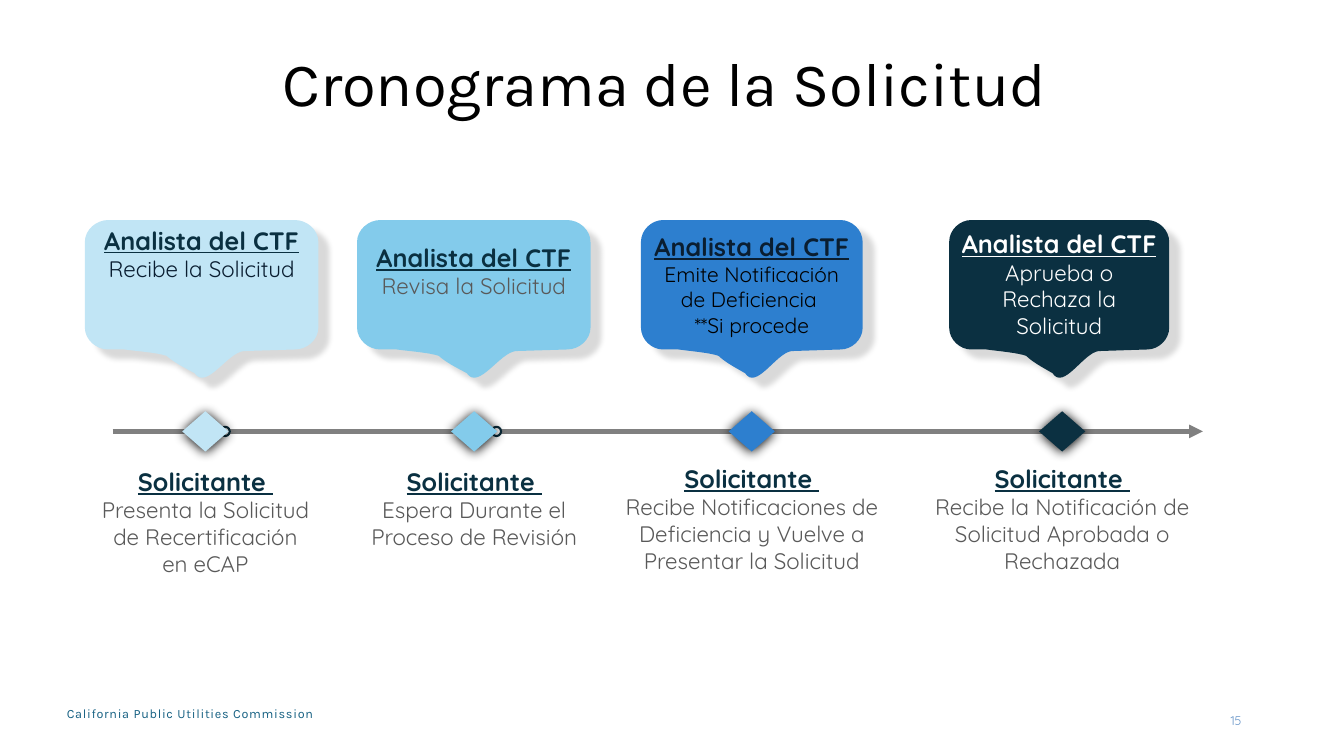
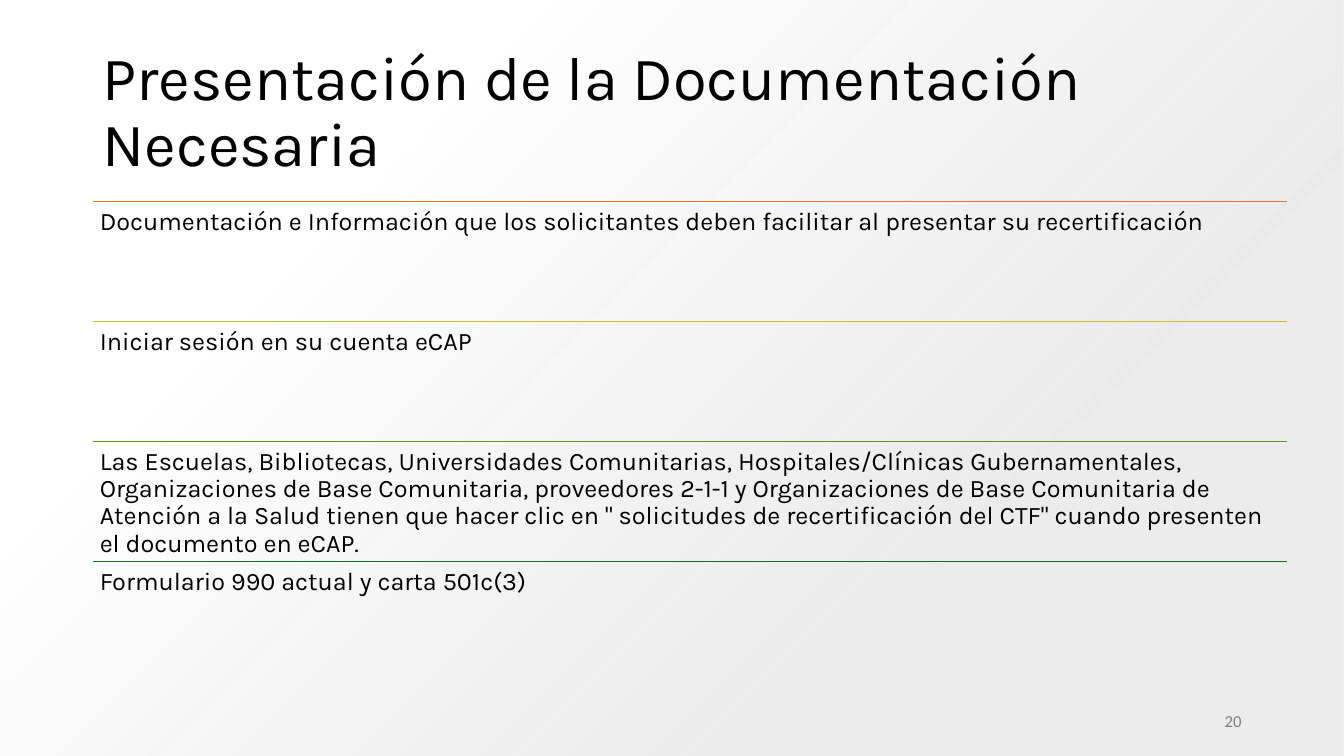
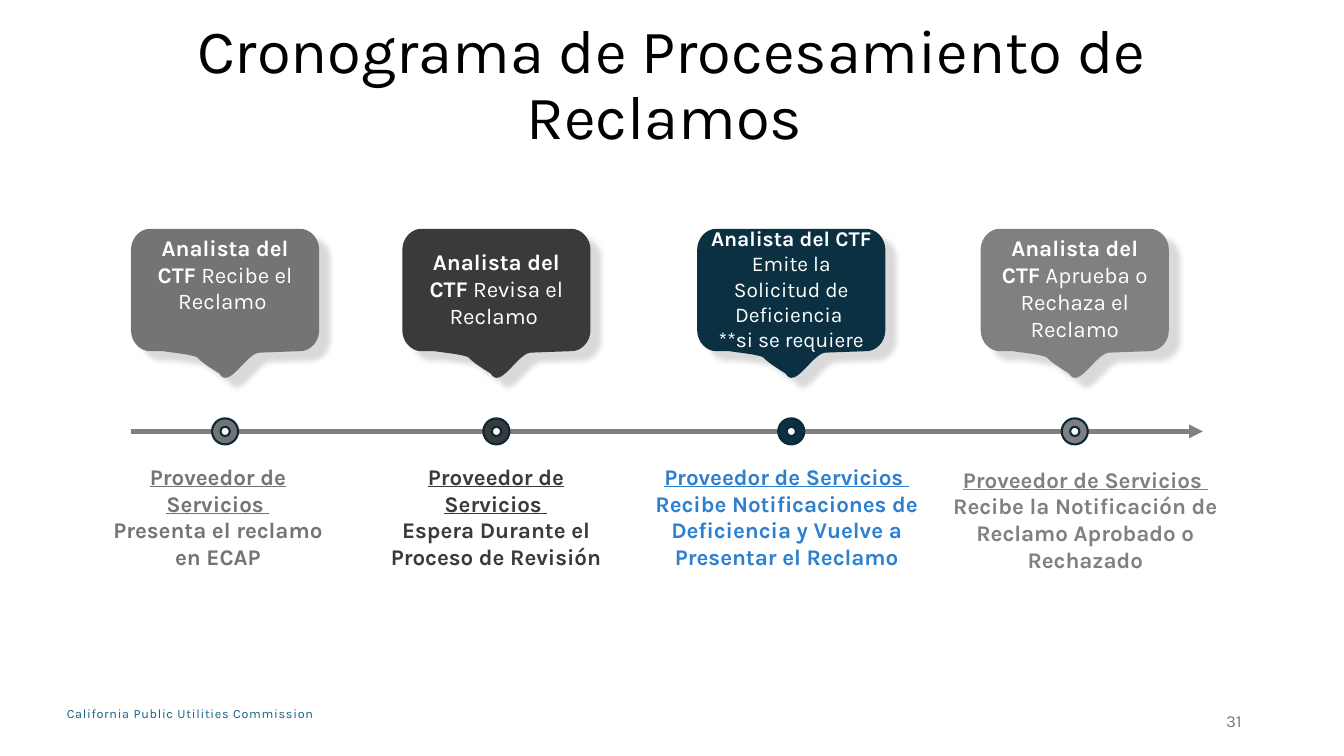
from dataclasses import dataclass, replace

from pptx import Presentation
from pptx import oxml, util as u
from pptx.dml.color import RGBColor
from pptx.enum import shapes, text
from pptx.oxml import ns

COLUMNS, ROWS = 160, 90
CELL = u.Inches(13.33) / COLUMNS
TITLE_ONLY = 5

BLACK = RGBColor(0x00, 0x00, 0x00)
WHITE = RGBColor(0xFF, 0xFF, 0xFF)
INK = RGBColor(0x0A, 0x1E, 0x31)
NAVY = RGBColor(0x0B, 0x30, 0x41)
HEADING = RGBColor(0x0A, 0x30, 0x41)
OUTLINE = RGBColor(0x09, 0x2A, 0x39)
PALE = RGBColor(0xC1, 0xE5, 0xF5)
SKY = RGBColor(0x83, 0xCB, 0xEB)
BLUE = RGBColor(0x2D, 0x7F, 0xCF)
TEAL = RGBColor(0x15, 0x60, 0x82)
SOFT_BLUE = RGBColor(0x69, 0x96, 0xC9)
BODY_GREY = RGBColor(0x59, 0x59, 0x59)
GREY = RGBColor(0x80, 0x80, 0x80)
NUMBER_GREY = RGBColor(0x79, 0x79, 0x79)
STONE = RGBColor(0x74, 0x74, 0x74)
CHARCOAL = RGBColor(0x3A, 0x3A, 0x3A)
ORANGE = RGBColor(0xE9, 0x71, 0x32)
MUSTARD = RGBColor(0xCB, 0xC1, 0x1E)
LEAF = RGBColor(0x56, 0x99, 0x1D)
FOREST = RGBColor(0x19, 0x6B, 0x24)

CALLOUT_SHADOW = (14, 4, 10, 40)
DIAMOND_SHADOW = (100, 8.5, 1, 90)

CENTER, LEFT, RIGHT = text.PP_ALIGN.CENTER, text.PP_ALIGN.LEFT, text.PP_ALIGN.RIGHT
TOP, MIDDLE = text.MSO_ANCHOR.TOP, text.MSO_ANCHOR.MIDDLE
AXIS = 51.36
ARROW_END = 143.2
DOT = 1.1

CALLOUT_START = (0, 0.14)
CALLOUT_OUTLINE = [
    [(0, 0.06), (0.05, 0), (0.1, 0)],
    [(0.9, 0)],
    [(0.95, 0), (1, 0.06), (1, 0.14)],
    [(1, 0.68)],
    [(1, 0.76), (0.95, 0.82), (0.9, 0.82)],
    [(0.68, 0.83)],
    [(0.61, 0.84), (0.52, 1.08), (0.47, 0.97)],
    [(0.42, 0.93), (0.38, 0.9), (0.35, 0.86)],
    [(0.31, 0.84), (0.22, 0.83), (0.17, 0.82)],
    [(0.15, 0.82), (0.12, 0.82), (0.1, 0.82)],
    [(0.05, 0.82), (0, 0.76), (0, 0.68)],
]

GRADIENT = f"""<a:gradFill {ns.nsdecls('a')} rotWithShape="1"><a:gsLst>
<a:gs pos="28000"><a:srgbClr val="E8E8E8"><a:alpha val="84000"/></a:srgbClr></a:gs>
<a:gs pos="74000"><a:srgbClr val="FFFFFF"/></a:gs></a:gsLst>
<a:path path="circle"><a:fillToRect l="100000" t="100000"/></a:path>
<a:tileRect r="-100000" b="-100000"/></a:gradFill>"""


@dataclass(frozen=True)
class Style:
    font: str
    size: float
    color: RGBColor
    bold: bool = False
    underline: bool = False
    spacing: float = 0


@dataclass(frozen=True)
class Step:
    color: RGBColor
    center: float
    width: float
    analyst: list
    lift: float
    label_center: float
    label_top: float
    label_width: float
    label: list


TITLE = Style("Karla", 44, BLACK)
FOOTER = Style("Karla", 9, TEAL, spacing=0.5)
ROW = Style("Karla", 18, BLACK)


def cells(*lengths):
    return [round(length * CELL) for length in lengths]


def write(frame, paragraphs, align=LEFT, anchor=TOP, spacing=None, insets=(0.1, 0.05, 0.1, 0.05)):
    frame.word_wrap = True
    frame.auto_size = text.MSO_AUTO_SIZE.NONE
    frame.vertical_anchor = anchor
    frame.margin_left, frame.margin_top, frame.margin_right, frame.margin_bottom = map(u.Inches, insets)
    for index, runs in enumerate(paragraphs):
        paragraph = frame.add_paragraph() if index else frame.paragraphs[0]
        paragraph.alignment = align
        if spacing:
            paragraph.line_spacing = spacing
        for words, style in runs:
            run = paragraph.add_run()
            run.text = words
            font = run.font
            font.name, font.size = style.font, u.Pt(style.size)
            font.bold, font.underline = style.bold, style.underline
            font.color.rgb = style.color
            if style.spacing:
                font._element.set("spc", str(round(style.spacing * 100)))


def set_effects(shape, shadow=None):
    properties = shape._element.spPr
    effects = properties.find(ns.qn("a:effectLst"))
    if effects is None:
        effects = oxml.parse_xml(f"<a:effectLst {ns.nsdecls('a')}/>")
        properties.append(effects)
    if shadow:
        alpha, blur, distance, angle = shadow
        effects.append(oxml.parse_xml(
            f'<a:outerShdw {ns.nsdecls("a")} blurRad="{u.Pt(blur)}" dist="{u.Pt(distance)}"'
            f' dir="{angle * 60000}" algn="ctr" rotWithShape="0">'
            f'<a:srgbClr val="000000"><a:alpha val="{alpha * 1000}"/></a:srgbClr></a:outerShdw>'))


def paint(shape, color, outline=None, shadow=None):
    shape.fill.solid()
    shape.fill.fore_color.rgb = color
    if outline:
        shape.line.color.rgb = outline
        shape.line.width = u.Pt(1.5)
    else:
        shape.line.fill.background()
    shape.shadow.inherit = False
    set_effects(shape, shadow)


def add_text(slide, left, top, width, height, paragraphs, **options):
    box = slide.shapes.add_textbox(*cells(left, top, width, height))
    write(box.text_frame, paragraphs, **options)


def add_line(slide, left, right, row, color, width, arrow=False):
    line = slide.shapes.add_connector(shapes.MSO_CONNECTOR.STRAIGHT, *cells(left, row, right, row))
    line.line.color.rgb = color
    line.line.width = u.Pt(width)
    if arrow:
        line.line._get_or_add_ln().append(oxml.parse_xml(f'<a:tailEnd {ns.nsdecls("a")} type="triangle"/>'))
    set_effects(line)


def add_marker(slide, kind, center, width, height, color, **options):
    marker = slide.shapes.add_shape(
        kind, *cells(center - width / 2, AXIS - height / 2, width, height))
    paint(marker, color, **options)


def add_dot(slide, center, size, color):
    add_marker(slide, shapes.MSO_SHAPE.OVAL, center, size, size, color, outline=OUTLINE)


def bend(callout, width, height):
    outline = callout._element.xpath(".//a:custGeom/a:pathLst/*")[0]
    outline.set("h", str(cells(height)[0]))
    callout.height = cells(height)[0]
    for side, segment in zip(outline.findall(ns.qn("a:lnTo")), CALLOUT_OUTLINE):
        if len(segment) == 3:
            bezier = oxml.parse_xml(f"<a:cubicBezTo {ns.nsdecls('a')}/>")
            for x, y in segment:
                across, down = cells(x * width, y * height)
                bezier.append(oxml.parse_xml(f'<a:pt {ns.nsdecls("a")} x="{across}" y="{down}"/>'))
            outline.replace(side, bezier)


def add_callout(slide, step, top, height):
    left = step.center - step.width / 2
    corners = [CALLOUT_START] + [segment[-1] for segment in CALLOUT_OUTLINE]
    start, *rest = [cells(left + x * step.width, top + y * height) for x, y in corners]
    builder = slide.shapes.build_freeform(*start)
    builder.add_line_segments(rest, close=True)
    callout = builder.convert_to_shape()
    bend(callout, step.width, height)
    paint(callout, step.color, shadow=CALLOUT_SHADOW)
    write(callout.text_frame, step.analyst, align=CENTER, anchor=MIDDLE if step.lift else TOP,
          insets=(0.1, 0.05, 0.1, 0.05 + step.lift))


def add_label(slide, step):
    add_text(slide, step.label_center - step.label_width / 2, step.label_top, step.label_width, 14,
             step.label, align=CENTER)


def start_slide(deck, heading, number, number_style, place=(8, 4.8, 144, 11), align=CENTER):
    slide = deck.slides.add_slide(deck.slide_layouts[TITLE_ONLY])
    title = slide.shapes.title
    title.left, title.top, title.width, title.height = cells(*place)
    write(title.text_frame, [[(heading, TITLE)]], align=align, anchor=MIDDLE, spacing=0.9)
    add_text(slide, 113, 83.4, 36, 4.8, [[(number, number_style)]], align=RIGHT, anchor=MIDDLE)
    return slide


def add_footer(slide):
    add_text(slide, 7.95, 84, 38.5, 1.8, [[("California Public Utilities Commission", FOOTER)]],
             insets=(0, 0, 0, 0))


def application_step(color, center, width, head_color, action, lift, label_center, label_top,
                     label_width, task, action_color, size=16, note=None):
    head = Style("Quicksand", 18, head_color, bold=True, underline=True)
    action_style = Style("Quicksand", size, action_color)
    analyst = [[("Analista del CTF", head), (" " + action, action_style)]]
    if note:
        analyst.append([(note, action_style)])
    label = [[("Solicitante ", replace(head, color=HEADING))],
             [(task, Style("Quicksand", 16, BODY_GREY))]]
    return Step(color, center, width, analyst, lift, label_center, label_top, label_width, label)


def claim_step(color, center, action, lift, label_center, label_top, label_width, task,
               size=16, note=None, label_color=None):
    plain = Style("Karla", size, WHITE)
    analyst = [[("Analista del CTF", replace(plain, bold=True)), (" " + action, plain)]]
    if note:
        analyst.append([(note, plain)])
    strong = Style("Karla", 16, label_color or color, bold=True)
    label = [[("Proveedor de Servicios ", replace(strong, underline=True))], [(task, strong)]]
    return Step(color, center, 22.4, analyst, lift, label_center, label_top, label_width, label)


def add_application_timeline(deck):
    slide = start_slide(deck, "Cronograma de la Solicitud ", "15", Style("Quicksand", 9, SOFT_BLUE))
    add_footer(slide)
    steps = [
        application_step(PALE, 24, 27.8, HEADING, "Recibe la Solicitud", 0, 24.45, 54.9, 27.8,
                         "Presenta la Solicitud de Recertificación en eCAP", INK),
        application_step(SKY, 56.4, 27.8, HEADING, "Revisa la Solicitud", 0.56, 56.45, 54.9, 27.8,
                         "Espera Durante el Proceso de Revisión", BODY_GREY),
        application_step(BLUE, 89.5, 26.4, INK, "Emite Notificación de Deficiencia ", 0.29, 89.5, 54.55, 34.7,
                         "Recibe Notificaciones de Deficiencia y Vuelve a Presentar la Solicitud",
                         BLACK, size=15, note="**Si procede"),
        application_step(NAVY, 126.1, 26.2, WHITE, "Aprueba o Rechaza la Solicitud", 0.3, 126.45, 54.55, 34.7,
                         "Recibe la Notificación de Solicitud Aprobada o Rechazada", WHITE),
    ]
    add_line(slide, 13.4, ARROW_END, AXIS, GREY, 3.25, arrow=True)
    for center in (26.8, 59.1):
        add_dot(slide, center, DOT, WHITE)
    for step in steps:
        add_callout(slide, step, 26.2, 18.8)
        add_marker(slide, shapes.MSO_SHAPE.DIAMOND, step.label_center, 5.5, 4.8, step.color,
                   shadow=DIAMOND_SHADOW)
        add_label(slide, step)


def add_documents(deck):
    slide = start_slide(deck, "Presentación de la Documentación Necesaria", "20",
                        Style("Calibri", 12, GREY), place=(11, 4.8, 138, 17.4), align=LEFT)
    backdrop = slide.shapes.add_shape(shapes.MSO_SHAPE.RECTANGLE, *cells(0, 0, COLUMNS, ROWS))
    backdrop.fill.background()
    backdrop.line.fill.background()
    backdrop.shadow.inherit = False
    properties = backdrop._element.spPr
    properties.replace(properties.find(ns.qn("a:noFill")), oxml.parse_xml(GRADIENT))
    slide.shapes._spTree.insert(2, backdrop._element)

    requirements = [
        (ORANGE, "Documentación e Información que los solicitantes deben facilitar al presentar su "
                 "recertificación"),
        (MUSTARD, "Iniciar sesión en su cuenta eCAP"),
        (LEAF, "Las Escuelas, Bibliotecas, Universidades Comunitarias, Hospitales/Clínicas "
               "Gubernamentales, Organizaciones de Base Comunitaria, proveedores 2-1-1 y "
               "Organizaciones de Base Comunitaria de Atención a la Salud tienen que hacer clic en "
               "\" solicitudes de recertificación del CTF\" cuando presenten el documento en eCAP."),
        (FOREST, "Formulario 990 actual y carta 501c(3)"),
    ]
    left, width, first, height = 11.04, 142.2, 24, 14.28
    for index, (color, requirement) in enumerate(requirements):
        top = first + index * height
        add_line(slide, left, left + width, top, color, 1)
        add_text(slide, left, top, width, height, [[(requirement, ROW)]], spacing=0.9, insets=(0.07,) * 4)


def add_claims_timeline(deck):
    slide = start_slide(deck, "Cronograma de Procesamiento de Reclamos ", "31",
                        Style("Karla", 12, NUMBER_GREY))
    add_footer(slide)
    steps = [
        claim_step(STONE, 26.8, "Recibe el Reclamo ", 0, 25.95, 54.5, 30.5, "Presenta el reclamo en ECAP"),
        claim_step(CHARCOAL, 59.1, "Revisa el Reclamo ", 0.3, 59.05, 54.5, 30.5,
                   "Espera Durante el Proceso de Revisión"),
        claim_step(NAVY, 94.2, "Emite la Solicitud de Deficiencia ", 0.29, 93.65, 54.5, 34.7,
                   "Recibe Notificaciones de Deficiencia y Vuelve a Presentar el Reclamo",
                   size=15, note="**si se requiere", label_color=BLUE),
        claim_step(GREY, 127.95, "Aprueba o Rechaza el Reclamo", 0.3, 129.2, 54.85, 34.7,
                   "Recibe la Notificación de Reclamo Aprobado o Rechazado"),
    ]
    add_line(slide, 15.6, ARROW_END, AXIS, GREY, 3.25, arrow=True)
    for step in steps:
        add_callout(slide, step, 27.25, 17.76)
        add_dot(slide, step.center, 3.1, step.color)
        add_dot(slide, step.center, DOT, WHITE)
        add_label(slide, step)


def main():
    deck = Presentation()
    deck.slide_width, deck.slide_height = cells(COLUMNS, ROWS)
    add_application_timeline(deck)
    add_documents(deck)
    add_claims_timeline(deck)
    deck.save("out.pptx")


if __name__ == "__main__":
    main()
